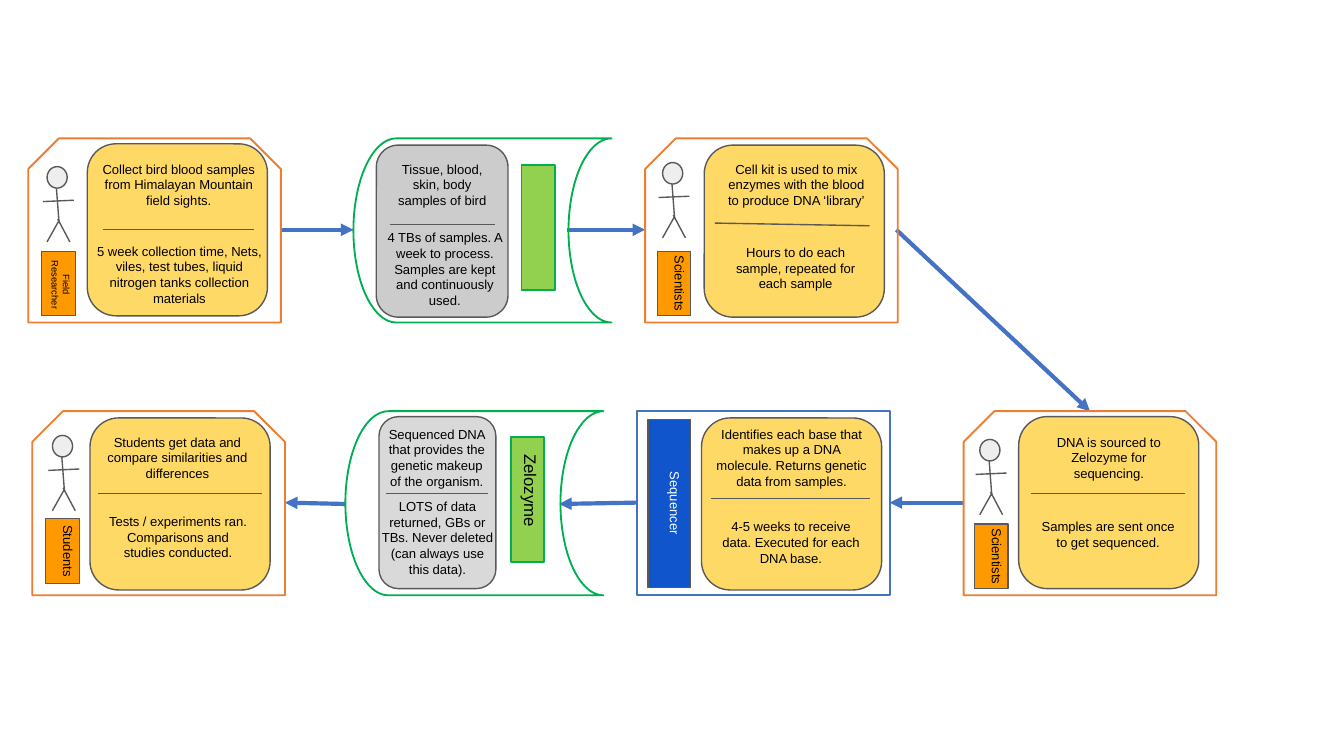
from dataclasses import dataclass
from typing import Optional

from lxml.etree import SubElement
from pptx import Presentation
from pptx.dml.color import RGBColor
from pptx.enum.shapes import MSO_CONNECTOR, MSO_SHAPE as Form
from pptx.enum.text import MSO_ANCHOR, MSO_AUTO_SIZE, PP_ALIGN as Align
from pptx.oxml.ns import qn
from pptx.util import Inches, Pt

COLORS = {
    "orange": "ED7D31", "green": "00B050", "blue": "4472C4", "grey line": "595959",
    "yellow": "FFD966", "silver": "CCCCCC", "light silver": "D9D9D9", "head": "EEEEEE",
    "role": "FF9900", "lime": "92D050", "royal": "1155CC",
    "black": "000000", "white": "FFFFFF",
}
TEXT_FORMAT = {
    "word_wrap": True, "auto_size": MSO_AUTO_SIZE.SHAPE_TO_FIT_TEXT,
    "vertical_anchor": MSO_ANCHOR.TOP,
    "margin_left": Inches(0.1), "margin_right": Inches(0.1),
    "margin_top": Inches(0.1), "margin_bottom": Inches(0.1),
}
FRAME_HEIGHT, CARD_HEIGHT = 1.37, 1.28
Point = tuple[float, float]
Area = tuple[float, float, float, float]


@dataclass(frozen=True)
class FrameStyle:
    form: Form
    width: float
    color: str


@dataclass(frozen=True)
class BadgeStyle:
    width: float
    height: float
    fill: str
    line: str = "grey line"
    weight: float = 0.75
    text_color: str = "black"
    align: Align = Align.CENTER


@dataclass(frozen=True)
class Badge:
    style: BadgeStyle
    at: Point
    label: str = ""
    length: float = 0.0  # room for the turned label
    depth: float = 0.32
    size: float = 7
    drop: float = 0.0  # label below the middle of the badge


@dataclass(frozen=True)
class Note:
    text: str
    area: Area


@dataclass(frozen=True)
class Stage:
    frame: FrameStyle
    at: Point
    card: Point
    notes: tuple[Note, Note]
    divider: tuple[Point, Point]
    badge: Badge
    person: Optional[Point] = None
    card_width: float = 1.34
    card_fill: str = "yellow"


ACTOR = FrameStyle(Form.SNIP_2_SAME_RECTANGLE, 1.88, "orange")
STORE = FrameStyle(Form.FLOWCHART_STORED_DATA, 1.92, "green")
SYSTEM = FrameStyle(Form.RECTANGLE, 1.88, "blue")
ROLE = BadgeStyle(0.25, 0.48, "role")
PLACE = BadgeStyle(0.25, 0.93, "lime", "green", 1, align=Align.LEFT)
MACHINE = BadgeStyle(0.32, 1.25, "royal", text_color="white")

STAGES = [
    Stage(ACTOR, (0.21, 1.03), (0.65, 1.07), (
        Note("Collect bird blood samples from Himalayan Mountain field sights.",
             (0.66, 1.1, 1.34, 0.56)),
        Note("5 week collection time, Nets, viles, test tubes, liquid nitrogen tanks "
             "collection materials", (0.62, 1.71, 1.43, 0.67)),
    ), ((0.77, 1.71), (1.89, 1.71)),
        Badge(ROLE, (0.31, 1.87), "Field Researcher", 0.65, 0.37, 5, 0.01), (0.35, 1.24)),
    Stage(STORE, (2.63, 1.03), (2.8, 1.08), (
        Note("Tissue, blood, skin, body samples of bird", (2.8, 1.1, 0.98, 0.56)),
        Note("4 TBs of samples. A week to process. Samples are kept and continuously "
             "used.", (2.75, 1.61, 1.12, 0.79)),
    ), ((2.9, 1.67), (3.68, 1.67)),
        Badge(PLACE, (3.88, 1.23)), card_width=0.98, card_fill="silver"),
    Stage(ACTOR, (4.8, 1.03), (5.24, 1.08), (
        Note("Cell kit is used to mix enzymes with the blood to produce DNA ‘library’",
             (5.29, 1.1, 1.27, 0.56)),
        Note("Hours to do each sample, repeated for each sample",
             (5.35, 1.72, 1.14, 0.56)),
    ), ((5.32, 1.66), (6.47, 1.68)),
        Badge(ROLE, (4.89, 1.87), "Scientists", 0.66), (4.93, 1.21)),
    Stage(ACTOR, (7.17, 3.06), (7.58, 3.1), (
        Note("DNA is sourced to Zelozyme for sequencing.", (7.69, 3.13, 1.12, 0.56)),
        Note("Samples are sent once to get sequenced.", (7.63, 3.76, 1.23, 0.44)),
    ), ((7.67, 3.67), (8.82, 3.67)),
        Badge(ROLE, (7.25, 3.9), "Scientists", 0.69), (7.29, 3.27)),
    Stage(SYSTEM, (4.74, 3.06), (5.22, 3.11), (
        Note("Identifies each base that makes up a DNA molecule. Returns genetic data "
             "from samples.", (5.22, 3.07, 1.34, 0.67)),
        Note("4-5 weeks to receive data. Executed for each DNA base.",
             (5.25, 3.76, 1.27, 0.56)),
    ), ((5.29, 3.71), (6.47, 3.71)),
        Badge(MACHINE, (4.82, 3.12), "Sequencer", 1.2)),
    Stage(STORE, (2.57, 3.06), (2.82, 3.1), (
        Note("Sequenced DNA that provides the genetic makeup of the organism.",
             (2.76, 3.07, 0.98, 0.67)),
        Note("LOTS of data returned, GBs or TBs. Never deleted (can always use this "
             "data).", (2.74, 3.61, 1.03, 0.79)),
    ), ((2.87, 3.67), (3.63, 3.67)),
        Badge(PLACE, (3.8, 3.25), "Zelozyme", 0.93, 0.35, 9, 0.03),
        card_width=0.87, card_fill="light silver"),
    Stage(ACTOR, (0.24, 3.06), (0.67, 3.11), (
        Note("Students get data and compare similarities and differences",
             (0.65, 3.13, 1.34, 0.56)),
        Note("Tests / experiments ran. Comparisons and studies conducted.",
             (0.71, 3.72, 1.23, 0.56)),
    ), ((0.73, 3.67), (1.95, 3.67)),
        Badge(ROLE, (0.34, 3.86), "Students", 0.71), (0.39, 3.24)),
]
ARROWS = [
    ((2.09, 1.71), (2.63, 1.71)), ((4.22, 1.71), (4.8, 1.71)),
    ((6.67, 1.71), (8.11, 3.06)), ((7.17, 3.74), (6.62, 3.74)),
    ((4.74, 3.74), (4.16, 3.75)), ((2.57, 3.75), (2.12, 3.74)),
]
# Legs, body and arms, measured from the corner of the head
LIMBS = [
    ((0.09, 0.4), (0, 0.56)), ((0.08, 0.39), (0.17, 0.56)),
    ((0.09, 0.42), (0.07, 0.16)), ((-0.03, 0.26), (0.2, 0.25)),
]


def color(name: str) -> RGBColor:
    return RGBColor.from_string(COLORS[name])


def draw_shape(page, form: Form, area: Area, line: str, weight: float = 0.75,
               fill: Optional[str] = None) -> None:
    shape = page.shapes.add_shape(form, *map(Inches, area))
    shape.shadow.inherit = False
    shape.line.color.rgb = color(line)
    shape.line.width = Pt(weight)
    if fill:
        shape.fill.solid()
        shape.fill.fore_color.rgb = color(fill)
    else:
        shape.fill.background()


def draw_line(page, start: Point, end: Point, name: str = "grey line",
              weight: float = 0.75, arrow: bool = False) -> None:
    line = page.shapes.add_connector(MSO_CONNECTOR.STRAIGHT, *map(Inches, start + end))
    line.line.color.rgb = color(name)
    line.line.width = Pt(weight)
    properties = line._element.spPr
    if arrow:
        SubElement(properties.find(qn("a:ln")), qn("a:tailEnd"), type="triangle")
    SubElement(properties, qn("a:effectLst"))


def draw_text(page, text: str, area: Area, size: float = 7, name: str = "black",
              align: Align = Align.CENTER, turn: float = 0) -> None:
    box = page.shapes.add_textbox(*map(Inches, area))
    box.rotation = turn
    for key, value in TEXT_FORMAT.items():
        setattr(box.text_frame, key, value)
    para = box.text_frame.paragraphs[0]
    para.alignment = align
    span = para.add_run()
    span.text = text
    for key, value in {"name": "Arial", "size": Pt(size)}.items():
        setattr(span.font, key, value)
    span.font.color.rgb = color(name)


def draw_badge(page, badge: Badge) -> None:
    style = badge.style
    left, top = badge.at
    draw_shape(page, Form.RECTANGLE, (left, top, style.width, style.height),
               style.line, style.weight, style.fill)
    if badge.label:  # centred on the badge, then turned
        area = (left + (style.width - badge.length) / 2,
                top + (style.height - badge.depth) / 2 + badge.drop,
                badge.length, badge.depth)
        draw_text(page, badge.label, area, badge.size, style.text_color, style.align, 90)


def draw_person(page, head: Point) -> None:
    left, top = head
    for (x1, y1), (x2, y2) in LIMBS:
        draw_line(page, (left + x1, top + y1), (left + x2, top + y2))
    draw_shape(page, Form.OVAL, (left, top, 0.15, 0.16), "grey line", fill="head")


def draw_stage(page, stage: Stage) -> None:
    frame = stage.frame
    draw_shape(page, frame.form, (*stage.at, frame.width, FRAME_HEIGHT), frame.color, 1)
    draw_shape(page, Form.ROUNDED_RECTANGLE, (*stage.card, stage.card_width, CARD_HEIGHT),
               "grey line", fill=stage.card_fill)
    draw_line(page, *stage.divider)
    for note in stage.notes:
        draw_text(page, note.text, note.area)
    draw_badge(page, stage.badge)
    if stage.person:
        draw_person(page, stage.person)


def main() -> None:
    deck = Presentation()
    deck.slide_width = Inches(10)
    deck.slide_height = deck.slide_width * 9 // 16  # widescreen
    page = deck.slides.add_slide(deck.slide_layouts[6])  # blank layout
    # Flow arrows lie beneath the stages
    for start, end in ARROWS:
        draw_line(page, start, end, "blue", 2.25, arrow=True)
    for stage in STAGES:
        draw_stage(page, stage)
    deck.save("out.pptx")


if __name__ == "__main__":
    main()
